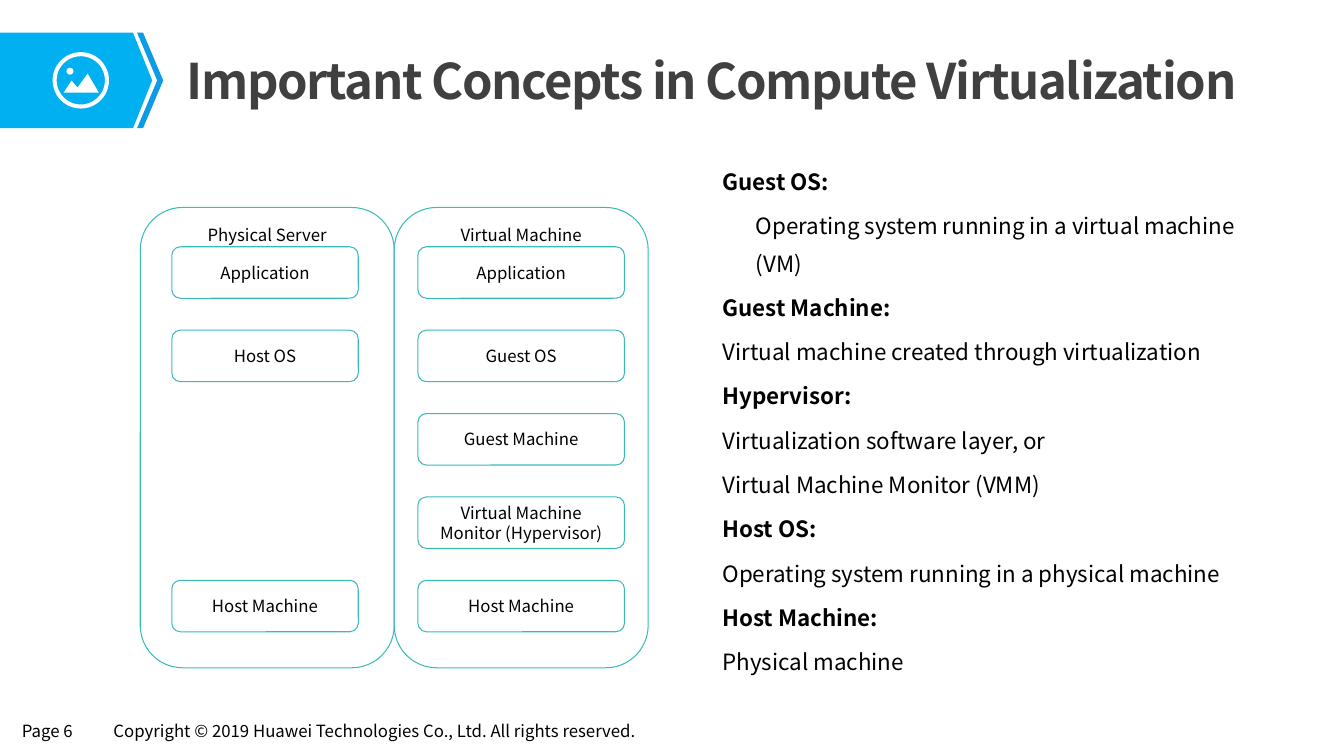
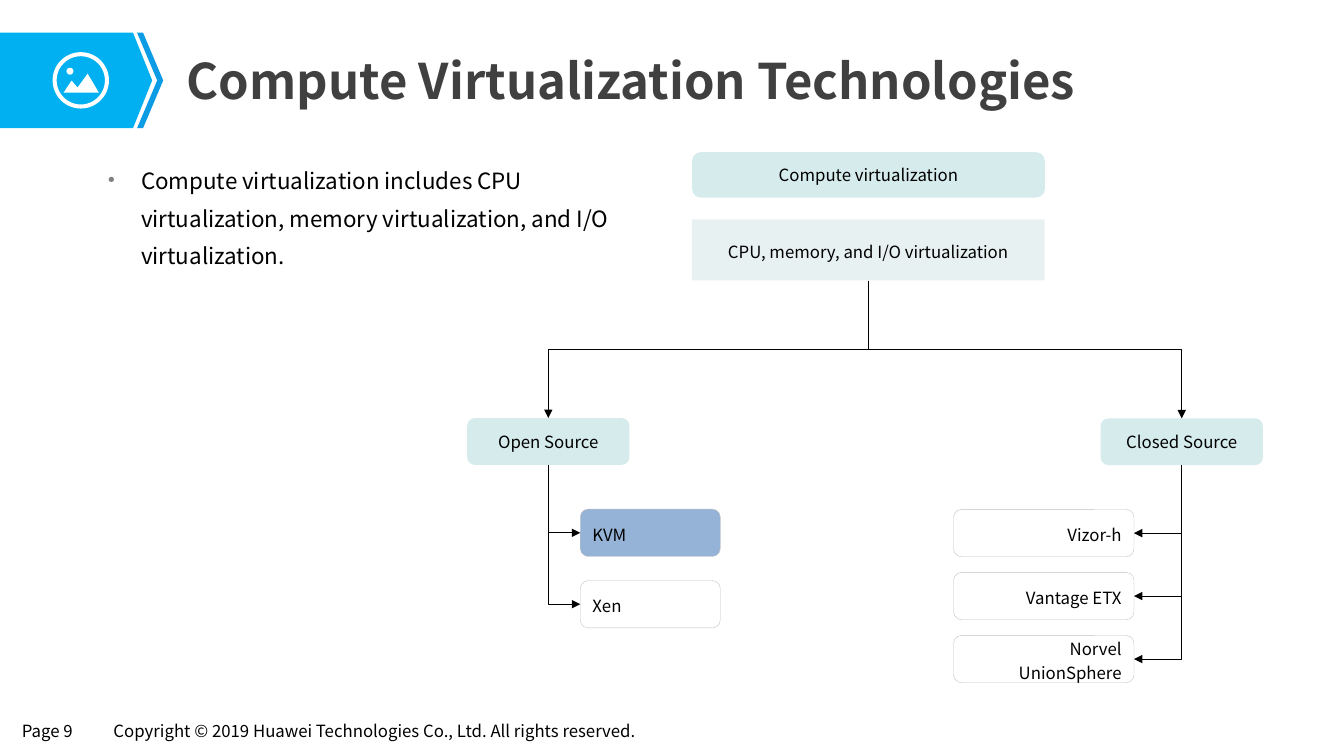
from lxml import etree
from pptx import Presentation
from pptx.dml.color import RGBColor
from pptx.enum import shapes, text
from pptx.oxml import ns
from pptx import util as u

Pt = u.Pt
FONT = "Noto Sans CJK SC"
COLORS = {
    "banner": "00B0F0", "chevron": "0B9CE5", "white": "FFFFFF",
    "title": "404040", "text": "000000", "teal": "3ABABA",
    "group": "D6EBEB", "scope": "E8F1F1", "chosen": "95B3D7",
    "hairline": "BFBFBF", "bullet": "808080",
}
ALIGN = text.PP_ALIGN
ANCHOR = text.MSO_ANCHOR
ROUND = shapes.MSO_SHAPE.ROUNDED_RECTANGLE
TOP, LEFT, BOTTOM, RIGHT = range(4)
COPYRIGHT = "Copyright © 2019 Huawei Technologies Co., Ltd. All rights reserved."


def rgb(name):
    return RGBColor.from_string(COLORS[name])


def apply(target, **values):
    for key, value in values.items():
        setattr(target, key, value)


def set_font(font, size, color="text", bold=False):
    apply(font, name=FONT, size=Pt(size), bold=bold)
    font.color.rgb = rgb(color)


def paint(shape, fill=None, line=None, width=0.75):
    shape.shadow.inherit = False
    if fill:
        shape.fill.solid()
        shape.fill.fore_color.rgb = rgb(fill)
    else:
        shape.fill.background()
    if line:
        shape.line.color.rgb = rgb(line)
        shape.line.width = Pt(width)
    else:
        shape.line.fill.background()
    return shape


def add_box(slide, box, label="", kind=ROUND, align=ALIGN.CENTER,
            anchor=ANCHOR.MIDDLE, spacing=None, **look):
    shape = paint(slide.shapes.add_shape(kind, *map(Pt, box)), **look)
    if label:
        frame = shape.text_frame
        apply(frame, word_wrap=True, vertical_anchor=anchor)
        line = frame.paragraphs[0]
        apply(line, text=label, alignment=align, line_spacing=spacing)
        set_font(line.runs[0].font, 12)
    return shape


def add_outline(slide, points, fill):
    start, *rest = [tuple(map(Pt, point)) for point in points]
    builder = slide.shapes.build_freeform(*start)
    builder.add_line_segments(rest, close=True)
    return paint(builder.convert_to_shape(), fill)


def add_text(slide, box, wrap=True):
    frame = slide.shapes.add_textbox(*map(Pt, box)).text_frame
    frame.word_wrap = wrap
    return frame


def add_elbow(slide, source, target, side, preset):
    """Arrow that leaves the bottom of source and enters a side of target."""
    arrow = slide.shapes.add_connector(shapes.MSO_CONNECTOR.ELBOW, 0, 0, 0, 0)
    arrow.begin_connect(source, BOTTOM)
    arrow.end_connect(target, side)
    # The preset runs sideways first, so it is turned to run down first
    across, down = arrow.end_x - arrow.begin_x, arrow.end_y - arrow.begin_y
    center_x = (arrow.begin_x + arrow.end_x) // 2
    center_y = (arrow.begin_y + arrow.end_y) // 2
    width, height = abs(down), abs(across)
    apply(arrow, left=center_x - width // 2, top=center_y - height // 2,
          width=width, height=height)
    props = arrow._element.spPr
    frame = props.find(ns.qn("a:xfrm"))
    frame.set("rot", str((270 if across > 0 else 90) * 60000))
    frame.set("flipH", "1" if across > 0 else "0")
    frame.set("flipV", "0")
    props.find(ns.qn("a:prstGeom")).set("prst", preset)
    arrow.line.color.rgb = rgb("text")
    arrow.line.width = Pt(0.75)
    etree.SubElement(props.find(ns.qn("a:ln")), ns.qn("a:tailEnd"),
                     type="triangle")
    etree.SubElement(props, ns.qn("a:effectLst"))


# Parts shared by all slides
def add_banner(slide, top=23.3, height=68.3):
    middle, bottom = top + height / 2, top + height
    add_outline(slide, [(0, top), (95, top), (108.7, middle), (95, bottom),
                        (0, bottom)], "banner")
    add_outline(slide, [(102.2, top), (97.9, top), (112.3, middle),
                        (97.9, bottom), (102.2, bottom), (116.6, middle)],
                "chevron")
    # Landscape icon
    oval = shapes.MSO_SHAPE.OVAL
    add_box(slide, (39, 38.7, 37.4, 37.4), kind=oval, line="white", width=2.9)
    add_box(slide, (47.5, 48.4, 5, 5), kind=oval, fill="white")
    add_outline(slide, [(45.4, 66.2), (51.1, 57.6), (55.4, 62.6),
                        (62.6, 52.6), (70.6, 66.2)], "white")


def add_footer(slide, page):
    for left, width, words in ((9.2, 60.5, f"Page {page}"),
                               (74.6, 407.5, COPYRIGHT)):
        frame = add_text(slide, (left, 512, width, 21), wrap=False)
        apply(frame, margin_left=Pt(6.5), margin_top=Pt(3))
        frame.paragraphs[0].text = words
        set_font(frame.paragraphs[0].runs[0].font, 12)


def new_slide(deck, heading, page, tracking=0):
    slide = deck.slides.add_slide(deck.slide_layouts[5])
    add_banner(slide)
    title = slide.shapes.title
    apply(title, left=Pt(125.3), top=Pt(31.8), width=Pt(834), height=Pt(50.4))
    frame = title.text_frame
    apply(frame, word_wrap=True, auto_size=text.MSO_AUTO_SIZE.NONE,
          vertical_anchor=ANCHOR.MIDDLE, margin_left=Pt(8), margin_right=Pt(8),
          margin_top=Pt(4), margin_bottom=Pt(4))
    line = frame.paragraphs[0]
    apply(line, text=heading, alignment=ALIGN.LEFT)
    set_font(line.runs[0].font, 35, "title", True)
    if tracking:
        line.runs[0]._r.get_or_add_rPr().set("spc", str(tracking * 100))
    add_footer(slide, page)
    return slide


def add_body(slide, box, entries, bullet=False):
    """Write entries of (words, bold, hanging) as body paragraphs."""
    frame = add_text(slide, box)
    for index, (words, bold, hanging) in enumerate(entries):
        line = frame.add_paragraph() if index else frame.paragraphs[0]
        props = line._p.get_or_add_pPr()
        props.set("marL", str(Pt(23.8)))
        props.set("indent", str(Pt(-23.8 if hanging else 0)))
        apply(line, line_spacing=1.4, space_before=Pt(4.8 if index else 0))
        if bullet:
            color = etree.SubElement(props, ns.qn("a:buClr"))
            etree.SubElement(color, ns.qn("a:srgbClr"), val=COLORS["bullet"])
            etree.SubElement(props, ns.qn("a:buSzPct"), val="40000")
            etree.SubElement(props, ns.qn("a:buChar"), char="●")
        run = line.add_run()
        run.text = words
        set_font(run.font, 16, bold=bold)
    return frame


# Layer stacks of the concepts slide
def add_stack(slide, box, name, layers, layer_width, shift=0):
    left, top, width, height = box
    add_box(slide, box, name, anchor=ANCHOR.TOP, line="teal")
    layer_left = left + (width - layer_width) / 2 + shift
    for row, layer in enumerate(layers):
        if layer:
            add_box(slide, (layer_left, top + 28.1 + 59.55 * row,
                            layer_width, 36.8), layer, line="teal")


def build_concepts(deck):
    slide = new_slide(deck, "Important Concepts in Compute Virtualization", 6,
                      tracking=-1)
    add_stack(slide, (100.2, 148.2, 181.4, 328.8), "Physical Server",
              ["Application", "Host OS", None, None, "Host Machine"],
              133.2, shift=-1.6)
    add_stack(slide, (281.6, 148.2, 181.4, 328.8), "Virtual Machine",
              ["Application", "Guest OS", "Guest Machine",
               "Virtual Machine Monitor (Hypervisor)", "Host Machine"], 147.6)
    definitions = {
        "Guest OS:": ["Operating system running in a virtual machine (VM)"],
        "Guest Machine:": ["Virtual machine created through virtualization"],
        "Hypervisor:": ["Virtualization software layer, or",
                        "Virtual Machine Monitor (VMM)"],
        "Host OS:": ["Operating system running in a physical machine"],
        "Host Machine:": ["Physical machine"],
    }
    entries = []
    for term, meanings in definitions.items():
        entries.append((term, True, True))
        entries += [(words, False, term != "Guest OS:") for words in meanings]
    frame = add_body(slide, (508.2, 108.7, 391.7, 389), entries)
    apply(frame, margin_left=Pt(8), margin_right=Pt(8))


# Tree of the technologies slide
def add_family(slide, box, name, products, child_box, pitch, side, chosen=None):
    """Place a group with its products; side is where the arrows enter."""
    group = add_box(slide, box, name, fill="group")
    left, top, width, height = child_box
    align = ALIGN.RIGHT if side == RIGHT else ALIGN.LEFT
    for row, product in enumerate(products):
        child = add_box(slide, (left, top + pitch * row, width, height),
                        product, align=align, spacing=1.2, line="hairline",
                        width=0.25,
                        fill="chosen" if product == chosen else None)
        add_elbow(slide, group, child, side, "bentConnector2")
    return group


def build_technologies(deck):
    slide = new_slide(deck, "Compute Virtualization Technologies", 9)
    add_body(slide, (69.9, 108.3, 402.5, 368.6),
             [("Compute virtualization includes CPU virtualization, memory "
               "virtualization, and I/O virtualization.", False, True)],
             bullet=True)
    # Root of the tree
    root = add_box(slide, (494.4, 108.7, 252, 32.4), "Compute virtualization",
                   fill="group")
    root.adjustments[0] = 0.19
    scope = add_box(slide, (494.2, 156.8, 252, 43.6),
                    "CPU, memory, and I/O virtualization",
                    kind=shapes.MSO_SHAPE.RECTANGLE, spacing=1.2, fill="scope")
    # Families
    families = [
        add_family(slide, (333.7, 298.6, 115.9, 33.5), "Open Source",
                   ["KVM", "Xen"], (414.5, 363.7, 100, 33.8), 51, LEFT,
                   chosen="KVM"),
        add_family(slide, (786.2, 298.8, 115.9, 33.5), "Closed Source",
                   ["Vizor-h", "Vantage ETX", "Norvel UnionSphere"],
                   (681.1, 363.9, 128.9, 33.8), 45, RIGHT),
    ]
    for group in families:
        add_elbow(slide, scope, group, TOP, "bentConnector3")


def main():
    deck = Presentation()
    apply(deck, slide_width=Pt(960), slide_height=Pt(540))
    build_concepts(deck)
    build_technologies(deck)
    deck.save("out.pptx")


if __name__ == "__main__":
    main()
